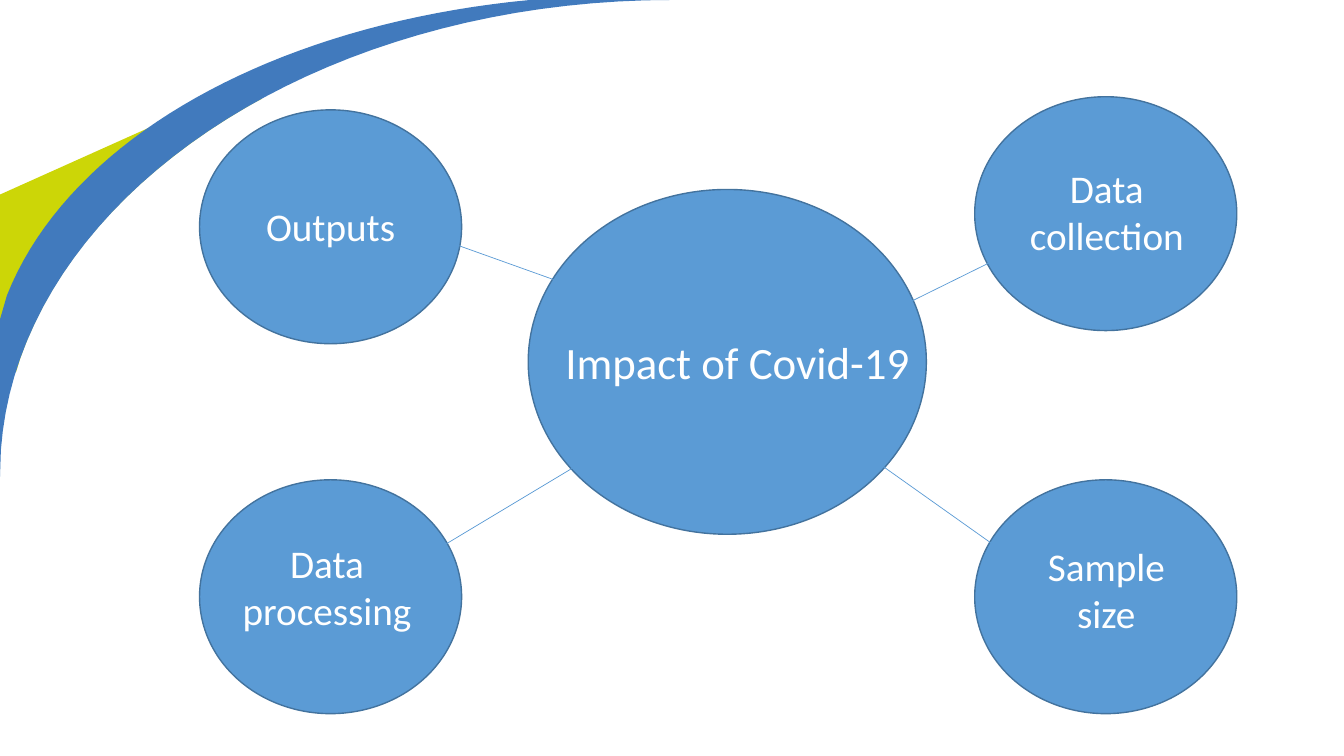
from dataclasses import dataclass
from lxml.etree import SubElement
from pptx import Presentation
from pptx.dml.color import RGBColor
from pptx.enum.shapes import MSO_CONNECTOR, MSO_SHAPE
from pptx.enum.text import PP_ALIGN
from pptx.oxml.ns import qn
from pptx.util import Pt


@dataclass(frozen=True)
class Theme:
    font: str = "Calibri"
    hub_size: int = 32
    label_size: int = 28
    circle: RGBColor = RGBColor(0x5B, 0x9B, 0xD5)
    outline: RGBColor = RGBColor(0x43, 0x73, 0x9E)
    swoosh: RGBColor = RGBColor(0x41, 0x7A, 0xBD)
    wedge: RGBColor = RGBColor(0xCC, 0xD6, 0x07)
    text: RGBColor = RGBColor(0xFF, 0xFF, 0xFF)


THEME = Theme()
HUB = (377.28, 135.36, 284.4, 246.24)
CIRCLE = (187.2, 167.04)
LEFT, RIGHT = 142.56, 696.24
LOWER = 342.72
SATELLITES = [
    ("Data collection", (RIGHT, 69.12), (26.64, 44.64, 135.36, 74.88), (273.6, 79.92), (12.96, 117.36)),
    ("Sample size", (RIGHT, LOWER), (34.56, 41.04, 118.8, 74.88), (252.72, 197.28), (12.96, 46.08)),
    ("Data processing", (LEFT, LOWER), (21.6, 38.88, 138.96, 74.88), (34.56, 197.28), (175.68, 46.08)),
    ("Outputs", (LEFT, 78.48), (27.36, 62.64, 132.48, 41.04), (19.44, 64.8), (175.68, 93.6)),
]


def curve(a, b, c, d, steps=40):
    points = []
    for i in range(steps + 1):
        t = i / steps
        u = 1 - t
        weights = (u ** 3, 3 * u * u * t, 3 * u * t * t, t ** 3)
        points.append(tuple(sum(w * q[k] for w, q in zip(weights, (a, b, c, d)))
                            for k in (0, 1)))
    return points


def add_outline(shapes, box, points, color):
    x, y = box[:2]
    placed = [(Pt(x + px), Pt(y + py)) for px, py in points]
    builder = shapes.build_freeform(*placed[0])
    builder.add_line_segments(placed[1:], close=True)
    sp = builder.convert_to_shape()
    sp.shadow.inherit = False
    sp.fill.solid()
    sp.fill.fore_color.rgb = color
    sp.line.fill.background()


def add_corner(shapes, box):
    wedge = [(181.4, 57.6), (187.2, 70.6)]
    wedge += curve((182.9, 72.7), (100.8, 118.8), (40.3, 182.2), (14.4, 256.3))
    wedge += [(11.5, 265.7), (0, 239), (0, 139)]
    add_outline(shapes, box, wedge, THEME.wedge)
    swoosh = [(515.5, 0)]
    swoosh += curve((480.2, 0), (223.2, 0), (13.7, 142.6), (0.7, 321.1))
    swoosh += [(0, 341.3), (0, 228.2)]
    swoosh += curve((5, 211), (49.7, 98.6), (195.8, 17.3), (378.7, 0))
    add_outline(shapes, box, swoosh, THEME.swoosh)


def add_circle(shapes, box):
    sp = shapes.add_shape(MSO_SHAPE.OVAL, *map(Pt, box))
    sp.shadow.inherit = False
    sp.fill.solid()
    sp.fill.fore_color.rgb = THEME.circle
    sp.line.color.rgb = THEME.outline
    sp.line.width = Pt(1)


def add_label(shapes, box, text, size, align):
    tf = shapes.add_textbox(*map(Pt, box)).text_frame
    tf.word_wrap = True
    tf.text = text
    p = tf.paragraphs[0]
    p.alignment = align
    font = p.runs[0].font
    font.name = THEME.font
    font.size = Pt(size)
    font.color.rgb = THEME.text


def add_spoke(shapes, start, end):
    line = shapes.add_connector(MSO_CONNECTOR.STRAIGHT, *map(Pt, start + end))
    line.line.color.rgb = THEME.circle
    line.line.width = Pt(0.5)
    SubElement(line._element.spPr, qn("a:effectLst"))


def add_hub(shapes, box):
    x, y = box[:2]
    add_circle(shapes, box)
    add_label(shapes, (x + 19.44, y + 100.08, 264.96, 46.08),
              "Impact of Covid-19", THEME.hub_size, PP_ALIGN.LEFT)


def add_satellite(shapes, box, hub, text, label, start, end):
    x, y = box[:2]
    group = shapes.add_group_shape().shapes
    add_circle(group, box)
    add_spoke(group, (hub[0] + start[0], hub[1] + start[1]), (x + end[0], y + end[1]))
    dx, dy, w, h = label
    add_label(group, (x + dx, y + dy, w, h), text, THEME.label_size, PP_ALIGN.CENTER)


def main():
    prs = Presentation()
    prs.slide_width, prs.slide_height = Pt(960), Pt(540)
    s = prs.slides.add_slide(prs.slide_layouts[6])
    add_corner(s.shapes, (0, 0, 516, 342))
    add_hub(s.shapes, HUB)
    for text, corner, label, start, end in SATELLITES:
        add_satellite(s.shapes, corner + CIRCLE, HUB, text, label, start, end)
    prs.save("out.pptx")


if __name__ == "__main__":
    main()
